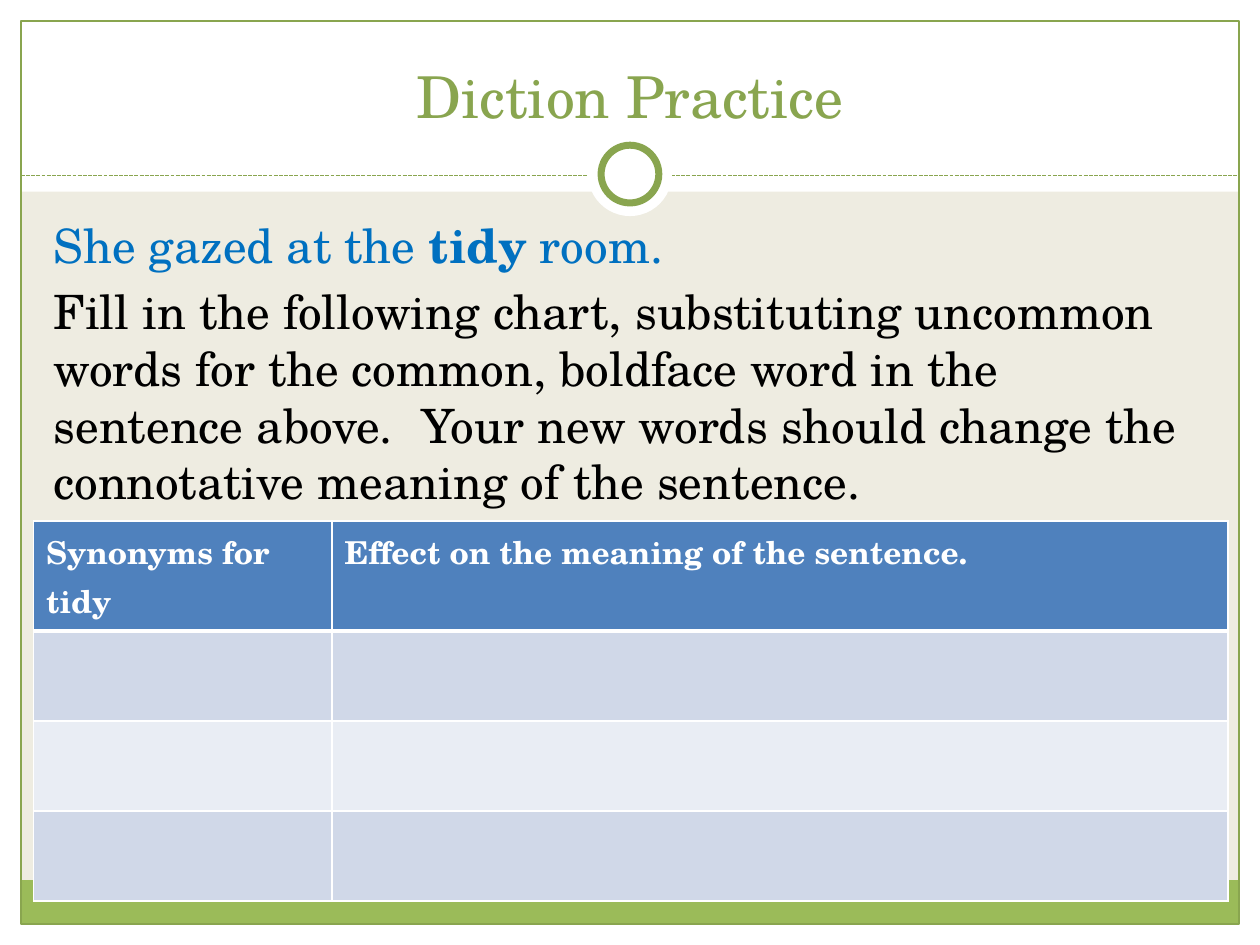
from lxml.etree import SubElement
from pptx import Presentation
from pptx.dml.color import RGBColor
from pptx.enum.dml import MSO_LINE
from pptx.enum.shapes import MSO_CONNECTOR, MSO_SHAPE
from pptx.enum.text import MSO_ANCHOR, PP_ALIGN
from pptx.oxml import parse_xml
from pptx.oxml.ns import nsdecls, qn
from pptx.util import Pt

FONT = "TeX Gyre Schola"
GREEN, WHITE = "89A54F", "FFFFFF"
color = RGBColor.from_string


def add_text(paragraph, text, size, hue, bold=False):
    run = paragraph.add_run()
    run.text = text
    for name, value in {"name": FONT, "size": Pt(size), "bold": bold}.items():
        setattr(run.font, name, value)
    run.font.color.rgb = color(hue)


prs = Presentation()
prs.slide_width, prs.slide_height = Pt(720), Pt(540)
slide = prs.slides.add_slide(prs.slide_layouts[5])
slide.background.fill.solid()
slide.background.fill.fore_color.rgb = color("EEECE1")

# Page margins, footer band, frame and the ring on the divider
RECT, OVAL = MSO_SHAPE.RECTANGLE, MSO_SHAPE.OVAL
decorations = [
    (RECT, (0, 528, 720, 12), WHITE, None),
    (RECT, (0, 0, 720, 109.5), WHITE, None),
    (RECT, (0, 0, 12, 540), WHITE, None),
    (RECT, (708, 0, 12, 540), WHITE, None),
    (RECT, (12, 503, 696, 25), "9BBB59", None),
    (RECT, (12, 12, 696, 516), None, 0.75),
    (OVAL, (336, 75.5, 48, 48), WHITE, None),
    (OVAL, (343.5, 83, 33, 33), WHITE, 4),
]
for preset, box, fill, line_width in decorations:
    if preset == OVAL and line_width is None:
        # The divider runs beneath the ring
        divider = slide.shapes.add_connector(
            MSO_CONNECTOR.STRAIGHT, Pt(12), Pt(100.5), Pt(708), Pt(100.5))
        divider.line.color.rgb = color(GREEN)
        divider.line.width = Pt(0.75)
        divider.line.dash_style = MSO_LINE.SQUARE_DOT
        SubElement(divider._element.spPr, qn("a:effectLst"))
    decoration = slide.shapes.add_shape(preset, *map(Pt, box))
    decoration.shadow.inherit = False
    if fill:
        decoration.fill.solid()
        decoration.fill.fore_color.rgb = color(fill)
    else:
        decoration.fill.background()
    if line_width:
        decoration.line.color.rgb = color(GREEN)
        decoration.line.width = Pt(line_width)
    else:
        decoration.line.fill.background()

# Title, brought in front of the white header
title = slide.shapes.title
title_box = {"left": 24, "top": 18, "width": 672, "height": 60}
for name, value in title_box.items():
    setattr(title, name, Pt(value))
title.text_frame.vertical_anchor = MSO_ANCHOR.BOTTOM
heading = title.text_frame.paragraphs[0]
heading.alignment = PP_ALIGN.CENTER
add_text(heading, "Diction Practice", 33, GREEN)
slide.shapes._spTree.append(title._element)

# Example sentence and instructions
BLUE, BLACK = "0070C0", "000000"
prompts = [
    [("She gazed at the", BLUE, False), (" tidy", BLUE, True), (" room.", BLUE, False)],
    [("Fill in the following chart, substituting uncommon words for the common, "
      "boldface word in the sentence above.\u00a0 Your new words should change the "
      "connotative meaning of the sentence.", BLACK, False)],
]
exercise = slide.shapes.add_textbox(Pt(23.5), Pt(120), Pt(669.5), Pt(360)).text_frame
exercise.word_wrap = True
for index, prompt in enumerate(prompts):
    paragraph = exercise.add_paragraph() if index else exercise.paragraphs[0]
    paragraph.space_before = Pt(5.4)
    for text, hue, bold in prompt:
        add_text(paragraph, text, 27, hue, bold)

# Synonym table
headers = ["Synonyms for tidy", "Effect on the meaning of the sentence."]
row_fills = ["4F81BD", "D0D8E8", "E9EDF4", "D0D8E8"]
synonyms = slide.shapes.add_table(
    4, 2, Pt(19.2), Pt(297.8), Pt(682.5), Pt(217)).table
for column, width in zip(synonyms.columns, (170.5, 512)):
    column.width = Pt(width)
for r, (row, fill) in enumerate(zip(synonyms.rows, row_fills)):
    row.height = Pt(51.4 if r else 62.8)
    for c, cell in enumerate(row.cells):
        cell.fill.solid()
        cell.fill.fore_color.rgb = color(fill)
        if r == 0:
            add_text(cell.text_frame.paragraphs[0], headers[c], 18, WHITE, True)
        borders = {"lnL": 1, "lnR": 1, "lnT": 3 if r == 1 else 1, "lnB": 1 if r else 3}
        for position, (side, width) in enumerate(borders.items()):
            cell._tc.get_or_add_tcPr().insert(position, parse_xml(
                f'<a:{side} {nsdecls("a")} w="{Pt(width)}"><a:solidFill>'
                f'<a:srgbClr val="{WHITE}"/></a:solidFill></a:{side}>'))

prs.save("out.pptx")
